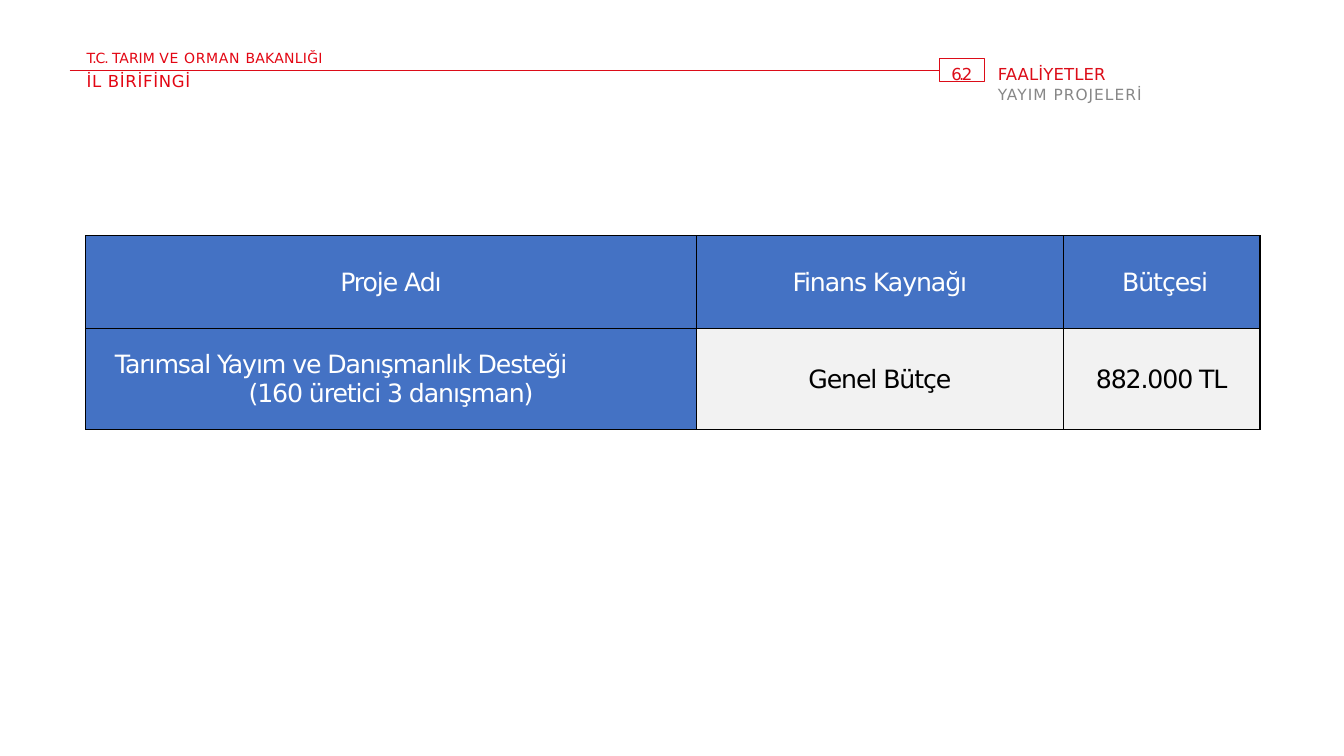
from pptx import Presentation
from pptx.dml.color import RGBColor
from pptx.enum.shapes import MSO_CONNECTOR, MSO_SHAPE
from pptx.enum.text import MSO_ANCHOR, MSO_AUTO_SIZE, PP_ALIGN
from pptx.oxml.ns import qn
from pptx.util import Pt
from lxml.etree import SubElement

# Each paragraph: style name, space before, spans of (text, letter spacing)
MINISTRY = [("ministry", 0, [("T.C. ", -0.8), ("TARIM ", 0), ("VE ORMAN ", 0.5), ("BAKANLIĞI", 0.2)])]
BRIEFING = [("heading", 0, [("İL BİRİFİNGİ", 0.5)])]
SECTION = [
    ("section", 0, [("FAALİYETLER", 0.1)]),
    ("subtitle", 0.8, [("YAYIM PROJELERİ", 0.7)]),
]
NUMBER = [("section", 0, [("6.2", -1.9)])]
PROJECTS = [
    [["Proje Adı"], ["Finans Kaynağı"], ["Bütçesi"]],
    [["Tarımsal Yayım ve Danışmanlık Desteği", "(160 üretici 3 danışman)"],
     ["Genel Bütçe"], ["882.000 TL"]],
]
COLUMN_WIDTHS = [436.2, 262.2, 140.4]
ROW_HEIGHTS = [66.2, 72]
INDENTS = {"Bütçesi": 5, "Tarımsal Yayım ve Danışmanlık Desteği": 20.2}
LEFT_ALIGNED = {"Tarımsal Yayım ve Danışmanlık Desteği"}

THEME = {
    "font": "DejaVu Sans",
    "line": "DC0C18",
    "rule_width": 0.82,
    "border": "000000",
    "label_fill": "4472C4",
    "value_fill": "F2F2F2",
    "styles": {
        "ministry": (10, "E30613"),
        "heading": (11.8, "E30613"),
        "section": (11.8, "DC0C18"),
        "subtitle": (11, "878787"),
        "label": (18, "FFFFFF"),
        "value": (18, "000000"),
    },
}

LEFT = 61.2
RULE_LEFT = 49.7
NUMBER_BOX = (671, 42, 32.4, 16.4)


def set_values(target, values):
    for name, value in values.items():
        setattr(target, name, value)


def color(name):
    return RGBColor.from_string(name)


def add_span(para, text, style, spacing):
    size, ink = THEME["styles"][style]
    span = para.add_run()
    span.text = text
    set_values(span.font, {"name": THEME["font"], "size": Pt(size), "bold": False})
    span.font.color.rgb = color(ink)
    span.font._element.set("spc", str(round(spacing * 100)))


def write(box, paragraphs, top_inset=1, left_inset=0.7):
    frame = box.text_frame
    set_values(frame, {
        "word_wrap": True, "auto_size": MSO_AUTO_SIZE.NONE,
        "vertical_anchor": MSO_ANCHOR.TOP,
        "margin_left": Pt(left_inset), "margin_top": Pt(top_inset),
        "margin_right": 0, "margin_bottom": 0,
    })
    for index, (style, before, spans) in enumerate(paragraphs):
        para = frame.add_paragraph() if index else frame.paragraphs[0]
        set_values(para, {"alignment": PP_ALIGN.LEFT, "space_before": Pt(before)})
        for text, spacing in spans:
            add_span(para, text, style, spacing)


def place(box, left, top, width, height):
    set_values(box, {"left": Pt(left), "top": Pt(top), "width": Pt(width), "height": Pt(height)})


def add_header(page):
    place(page.shapes.title, 712, 44.6, 247, 30)
    write(page.shapes.title, SECTION, top_inset=1.4)
    for paragraphs, top, height in [(MINISTRY, 33.8, 13), (BRIEFING, 49.7, 15.2)]:
        box = page.shapes.add_textbox(Pt(LEFT), Pt(top), Pt(183), Pt(height))
        write(box, paragraphs, top_inset=1.4)

    number = page.shapes.add_shape(MSO_SHAPE.RECTANGLE, *map(Pt, NUMBER_BOX))
    number.shadow.inherit = False
    number.fill.background()
    write(number, NUMBER, top_inset=3.4, left_inset=8.6)

    left, top, _, height = NUMBER_BOX
    middle = top + height / 2
    rule = page.shapes.add_connector(
        MSO_CONNECTOR.STRAIGHT, Pt(RULE_LEFT), Pt(middle), Pt(left), Pt(middle))
    rule.end_connect(number, 1)
    SubElement(rule._element.spPr, qn("a:effectLst"))
    for shape in (number, rule):
        shape.line.color.rgb = color(THEME["line"])
        shape.line.width = Pt(THEME["rule_width"])
    rule.line.color.rgb = color("DC0C18")


def add_borders(cell):
    properties = cell._tc.get_or_add_tcPr()
    for index, side in enumerate(("lnL", "lnR", "lnT", "lnB")):
        border = properties.makeelement(qn(f"a:{side}"), {"w": str(Pt(1))})
        fill = SubElement(border, qn("a:solidFill"))
        SubElement(fill, qn("a:srgbClr"), val=THEME["border"])
        properties.insert(index, border)


def fill_cell(cell, lines, is_label):
    set_values(cell, {
        "vertical_anchor": MSO_ANCHOR.MIDDLE, "margin_left": Pt(0.7),
        "margin_right": Pt(0.7), "margin_top": Pt(0.7), "margin_bottom": 0,
    })
    cell.fill.solid()
    cell.fill.fore_color.rgb = color(THEME["label_fill" if is_label else "value_fill"])
    add_borders(cell)
    for index, text in enumerate(lines):
        para = cell.text_frame.add_paragraph() if index else cell.text_frame.paragraphs[0]
        para.alignment = PP_ALIGN.LEFT if text in LEFT_ALIGNED else PP_ALIGN.CENTER
        if text in INDENTS:
            para._p.get_or_add_pPr().set("marL", str(Pt(INDENTS[text])))
        add_span(para, text, "label" if is_label else "value", -0.8)


def add_projects(page):
    table = page.shapes.add_table(
        len(ROW_HEIGHTS), len(COLUMN_WIDTHS), Pt(LEFT), Pt(168.5),
        Pt(sum(COLUMN_WIDTHS)), Pt(sum(ROW_HEIGHTS))).table
    set_values(table, {"first_row": False, "horz_banding": False})
    for column, width in zip(table.columns, COLUMN_WIDTHS):
        column.width = Pt(width)
    for row, height in zip(table.rows, ROW_HEIGHTS):
        row.height = Pt(height)
    for r, row in enumerate(PROJECTS):
        for c, lines in enumerate(row):
            fill_cell(table.cell(r, c), lines, is_label=r == 0 or c == 0)


def main():
    deck = Presentation()
    set_values(deck, {"slide_width": Pt(960), "slide_height": Pt(540)})
    page = deck.slides.add_slide(deck.slide_layouts[5])
    add_header(page)
    add_projects(page)
    deck.save("out.pptx")


if __name__ == "__main__":
    main()
